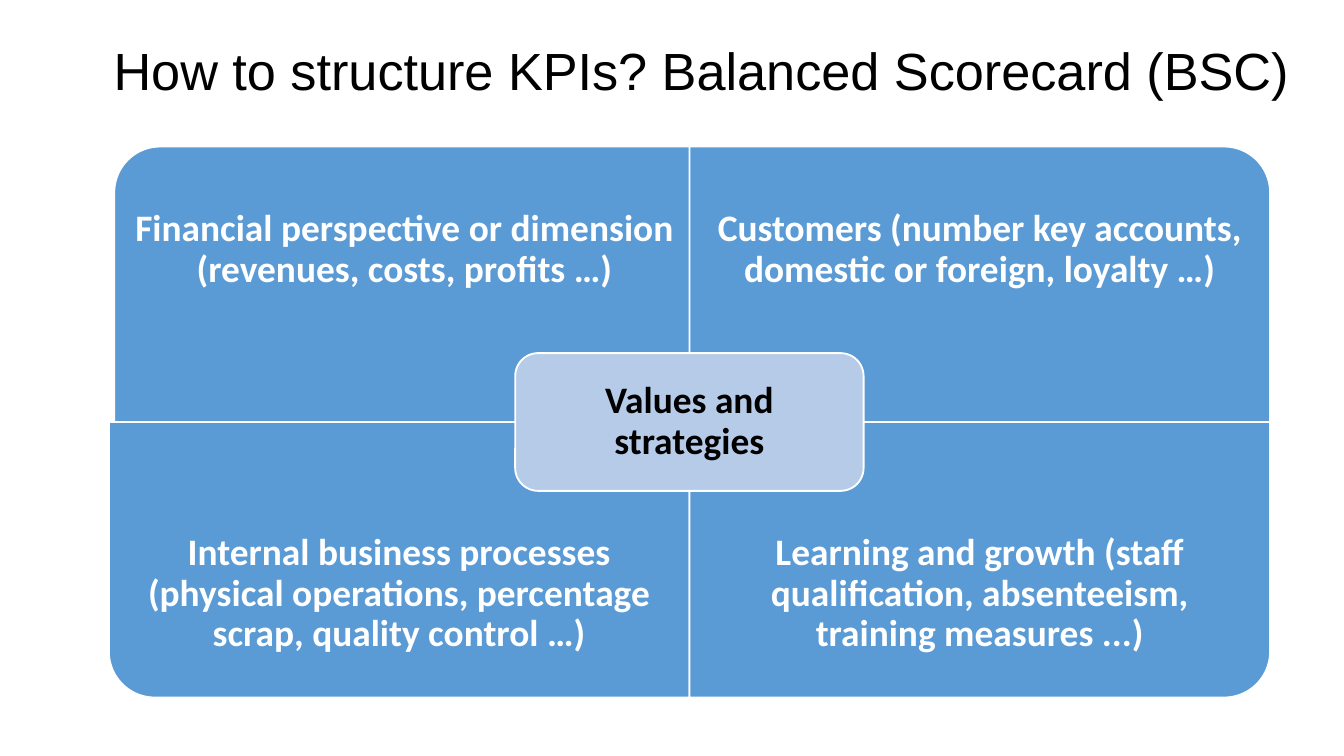
from pptx import Presentation
from pptx.dml.color import RGBColor
from pptx.enum.shapes import MSO_SHAPE
from pptx.enum.text import MSO_ANCHOR, PP_ALIGN
from pptx.util import Inches, Pt

WHITE = RGBColor(0xFF, 0xFF, 0xFF)
BLACK = RGBColor(0, 0, 0)
BLUE = RGBColor(0x5B, 0x9B, 0xD5)
PALE = RGBColor(0xB5, 0xCB, 0xE7)

# Matrix grid in inches: two columns, two rows
LEFT, TOP = 0.81, 1.09
COL, ROW = 4.32, 2.05
NUDGE = 0.04  # the first quarter sits slightly to the right


def write(frame, text, *, size=20, font="Calibri", color=WHITE, bold=True,
          inset=0.15, after=7):
    """Fill a text frame with one centred paragraph."""
    frame.word_wrap = True
    frame.vertical_anchor = MSO_ANCHOR.MIDDLE
    frame.margin_left = frame.margin_right = Inches(inset)
    frame.margin_top = frame.margin_bottom = Inches(inset)
    para = frame.paragraphs[0]
    para.alignment = PP_ALIGN.CENTER
    para.line_spacing = 0.9
    para.space_after = Pt(after)
    run = para.add_run()
    run.text = text
    run.font.size = Pt(size)
    run.font.name = font
    run.font.bold = bold
    run.font.color.rgb = color


class Board:
    """Holds the slide and places elements in columns and rows of the grid."""

    def __init__(self, slide):
        self.slide = slide

    def box(self, col, row, wide, high):
        return [Inches(n) for n in (LEFT + col * COL, TOP + row * ROW,
                                    wide * COL, high * ROW)]

    def text(self, text, col, row, wide, high, **style):
        area = self.slide.shapes.add_textbox(*self.box(col, row, wide, high))
        write(area.text_frame, text, **style)

    def panel(self, kind, fill, col, row, wide=1, high=1, turn=0):
        x, y, w, h = self.box(col, row, wide, high)
        if turn % 180:  # swap the sides about the centre
            x, y, w, h = x + (w - h) // 2, y + (h - w) // 2, h, w
        shape = self.slide.shapes.add_shape(kind, x, y, w, h)
        shape.rotation = turn
        shape.shadow.inherit = False
        shape.fill.solid()
        shape.fill.fore_color.rgb = fill
        shape.line.color.rgb = WHITE
        shape.line.width = Pt(1)
        return shape

    def quarter(self, text, col, row, turn, shift=0):
        """Panel with its outer corner rounded, text in its outer 3/4."""
        self.panel(MSO_SHAPE.ROUND_1_RECTANGLE, BLUE, col + shift, row,
                   turn=turn)
        self.text(text, col + shift, row * 1.25, 1, 0.75)

    def core(self, text, wide=0.6, high=0.5):
        """Rounded box over the middle of the matrix."""
        shape = self.panel(MSO_SHAPE.ROUNDED_RECTANGLE, PALE,
                           1 - wide / 2, 1 - high / 2, wide, high)
        write(shape.text_frame, text, color=BLACK, inset=0.13)


def main():
    deck = Presentation()
    deck.slide_width = Inches(10)
    deck.slide_height = deck.slide_width * 9 // 16
    board = Board(deck.slides.add_slide(deck.slide_layouts[6]))

    # Title
    board.text("How to structure KPIs? Balanced Scorecard (BSC)",
               -0.12 / COL, -TOP / ROW, 9.05 / COL, TOP / ROW, size=28,
               font="Arial", color=BLACK, bold=False, inset=0.1, after=0)

    # Four perspectives: text, column, row, turn
    board.quarter("Financial perspective or dimension "
                  "(revenues, costs, profits …)", 0, 0, 270, NUDGE / COL)
    board.quarter("Customers (number key accounts, "
                  "domestic or foreign, loyalty …)", 1, 0, 0)
    board.quarter("Internal business processes (physical operations, "
                  "percentage scrap, quality control …)", 0, 1, 180)
    board.quarter("Learning and growth (staff qualification, "
                  "absenteeism, training measures ...)", 1, 1, 90)

    # Centre
    board.core("Values and strategies")
    deck.save("out.pptx")


if __name__ == "__main__":
    main()
